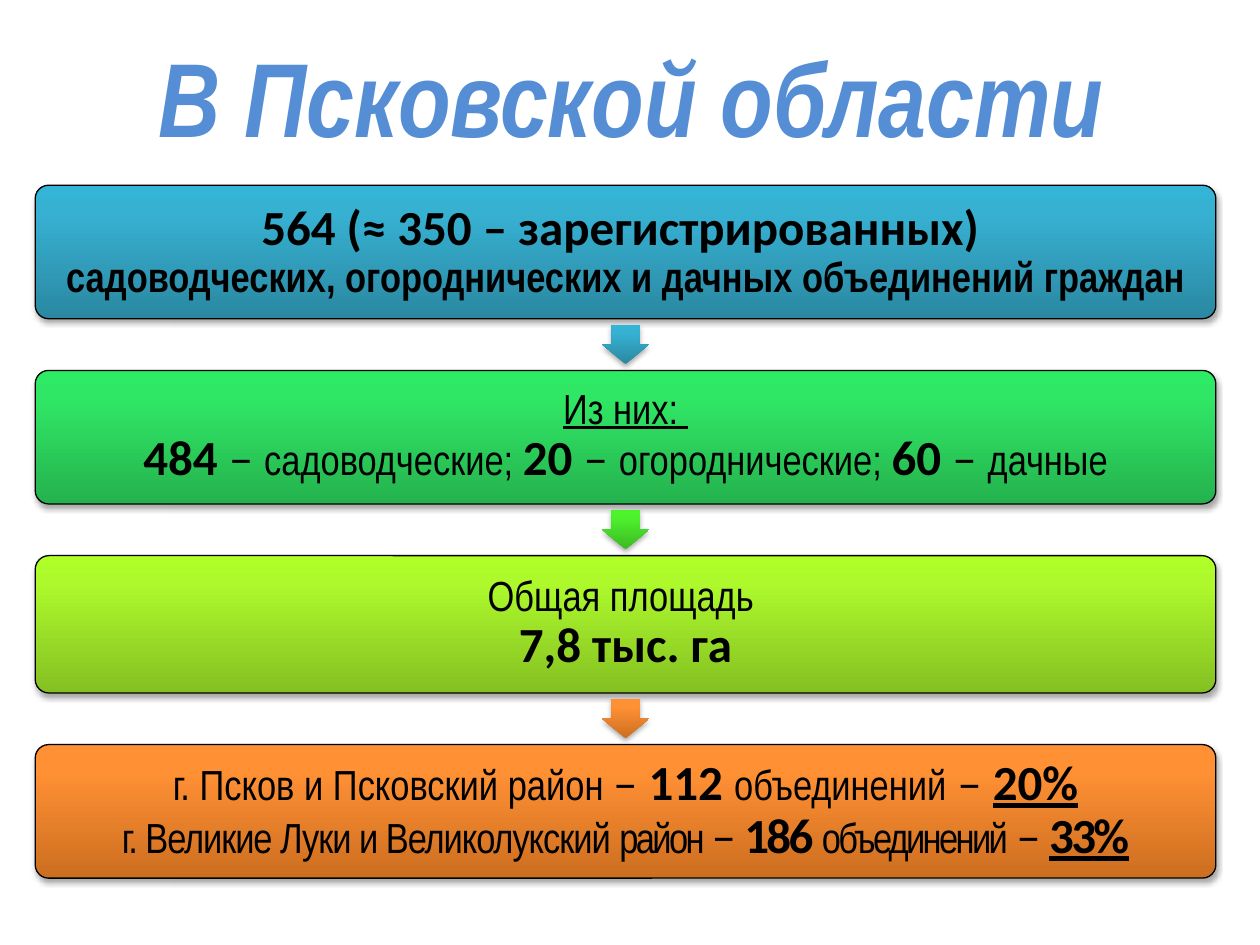
from dataclasses import dataclass

from pptx import Presentation
from pptx.dml.color import RGBColor
from pptx.enum.shapes import MSO_SHAPE as SHAPE
from pptx.enum.text import MSO_ANCHOR as ANCHOR, PP_ALIGN as ALIGN
from pptx.oxml import parse_xml
from pptx.oxml.ns import nsdecls, qn
from pptx.util import Inches, Pt


@dataclass(frozen=True)
class Theme:
    narrow: str = "Arial Narrow"
    sans: str = "Calibri"
    title_size: int = 60
    label_size: int = 24
    number_size: int = 28
    title: str = "558ED5"
    black: str = "000000"
    # Gradient stops from bottom to top
    blue: tuple = ("2A88A2", "37B1D2", "34B4D6")
    green: tuple = ("25B24E", "30E765", "2DEB64")
    bright_green: tuple = ("3CB923", "4EF02E", "4CF52A")
    lime: tuple = ("85C022", "ADF92C", "AFFE28")
    orange: tuple = ("CC6E20", "FF9034", "FF9136")


T = Theme()
LEFT, TOP, WIDTH, GAP = 0.28, 1.47, 9.37, 0.41
ARROW_W, ARROW_H = 0.31, 0.37


def add_run(p, text, font=T.narrow, size=T.label_size, color=T.black,
            bold=False, italic=False, underline=False, spacing=0):
    r = p.add_run()
    r.text = text
    f = r.font
    f.name, f.size, f.bold, f.italic = font, Pt(size), bold, italic
    f.underline = underline
    f.color.rgb = RGBColor.from_string(color)
    if spacing:
        r._r.get_or_add_rPr().set("spc", str(round(spacing * 100)))


def label(text, **fmt):
    return text, fmt


def number(text, bold=True, **fmt):
    return text, dict(font=T.sans, size=T.number_size, bold=bold, **fmt)


def dash(text="– ", **fmt):
    return number(text, bold=False, **fmt)


def style_shape(sp, colors):
    """Three-stop vertical gradient and a soft shadow below."""
    stops = "".join(
        f'<a:gs pos="{pos}000"><a:srgbClr val="{c}"/></a:gs>'
        for pos, c in zip((0, 80, 100), colors))
    spPr = sp._element.spPr
    spPr.find(qn("a:prstGeom")).addnext(parse_xml(
        f'<a:gradFill {nsdecls("a")} rotWithShape="0"><a:gsLst>{stops}</a:gsLst>'
        '<a:lin ang="16200000" scaled="0"/></a:gradFill>'))
    sp.shadow.inherit = False
    spPr.find(qn("a:effectLst")).append(parse_xml(
        f'<a:outerShdw {nsdecls("a")} blurRad="40000" dist="23000" dir="5400000" '
        'rotWithShape="0"><a:srgbClr val="000000"><a:alpha val="35000"/>'
        '</a:srgbClr></a:outerShdw>'))


def add_card(s, top, height, colors, lines, inset=0.1):
    sp = s.shapes.add_shape(SHAPE.ROUNDED_RECTANGLE, Inches(LEFT), Inches(top),
                            Inches(WIDTH), Inches(height))
    sp.adjustments[0] = 0.1
    sp.line.color.rgb = RGBColor.from_string(T.black)
    sp.line.width = Pt(0.75)
    style_shape(sp, colors)
    tf = sp.text_frame
    tf.word_wrap = True
    tf.vertical_anchor = ANCHOR.MIDDLE
    tf.margin_left = tf.margin_right = Inches(inset)
    tf.margin_top = tf.margin_bottom = Inches(inset)
    for i, runs in enumerate(lines):
        p = tf.add_paragraph() if i else tf.paragraphs[0]
        p.alignment = ALIGN.CENTER
        p.line_spacing = 0.9
        for text, fmt in runs:
            add_run(p, text, **fmt)
    return tf


def add_down_arrow(s, center_y, colors):
    sp = s.shapes.add_shape(
        SHAPE.RIGHT_ARROW, Inches(LEFT + (WIDTH - ARROW_W) / 2),
        Inches(center_y - ARROW_H / 2), Inches(ARROW_W), Inches(ARROW_H))
    sp.rotation = 90
    sp.adjustments[0], sp.adjustments[1] = 0.6, 0.5
    sp.line.fill.background()
    style_shape(sp, colors)


def add_title(s, text):
    sp = s.shapes.title
    sp.left, sp.top = Inches(0.51), Inches(0.13)
    sp.width, sp.height = Inches(9), Inches(1.25)
    tf = sp.text_frame
    tf.vertical_anchor = ANCHOR.MIDDLE
    p = tf.paragraphs[0]
    p.alignment = ALIGN.CENTER
    add_run(p, text, size=T.title_size, color=T.title, bold=True, italic=True)


def main():
    prs = Presentation()
    prs.slide_width, prs.slide_height = Inches(10), Inches(7.5)
    s = prs.slides.add_slide(prs.slide_layouts[5])
    add_title(s, "В Псковской области")

    # Card height, card colours, colours of the arrow below, text lines
    tight = {"spacing": -1.5}
    cards = [
        (1.06, T.blue, T.blue, [
            [number("564 (≈ 350 – зарегистрированных) ")],
            [label("садоводческих, огороднических и дачных объединений граждан",
                   bold=True)]]),
        (1.06, T.green, T.bright_green, [
            [label("Из них: ", underline=True)],
            [number("484 "), dash(), label("садоводческие; "),
             number("20 "), dash(), label("огороднические; "),
             number("60 "), dash(), label("дачные")]]),
        (1.09, T.lime, T.orange, [
            [label("Общая площадь ")],
            [number("7,8 тыс. га")]]),
        (1.06, T.orange, None, [
            [label("г. Псков и Псковский район "), dash(), number("112 "),
             label("объединений"), dash(" – "), number("20%", underline=True)],
            [label("г. Великие Луки и Великолукский ", spacing=-0.6),
             label("район ", **tight), dash(**tight), number("186 ", **tight),
             label("объединений", **tight), dash(" – ", **tight),
             number("33%", underline=True, **tight)]]),
    ]

    # Stack the cards, with an arrow in the middle of each gap
    top = TOP
    for height, colors, arrow_colors, lines in cards:
        add_card(s, top, height, colors, lines)
        if arrow_colors:
            add_down_arrow(s, top + height + GAP / 2, arrow_colors)
        top += height + GAP

    prs.save("out.pptx")


if __name__ == "__main__":
    main()
